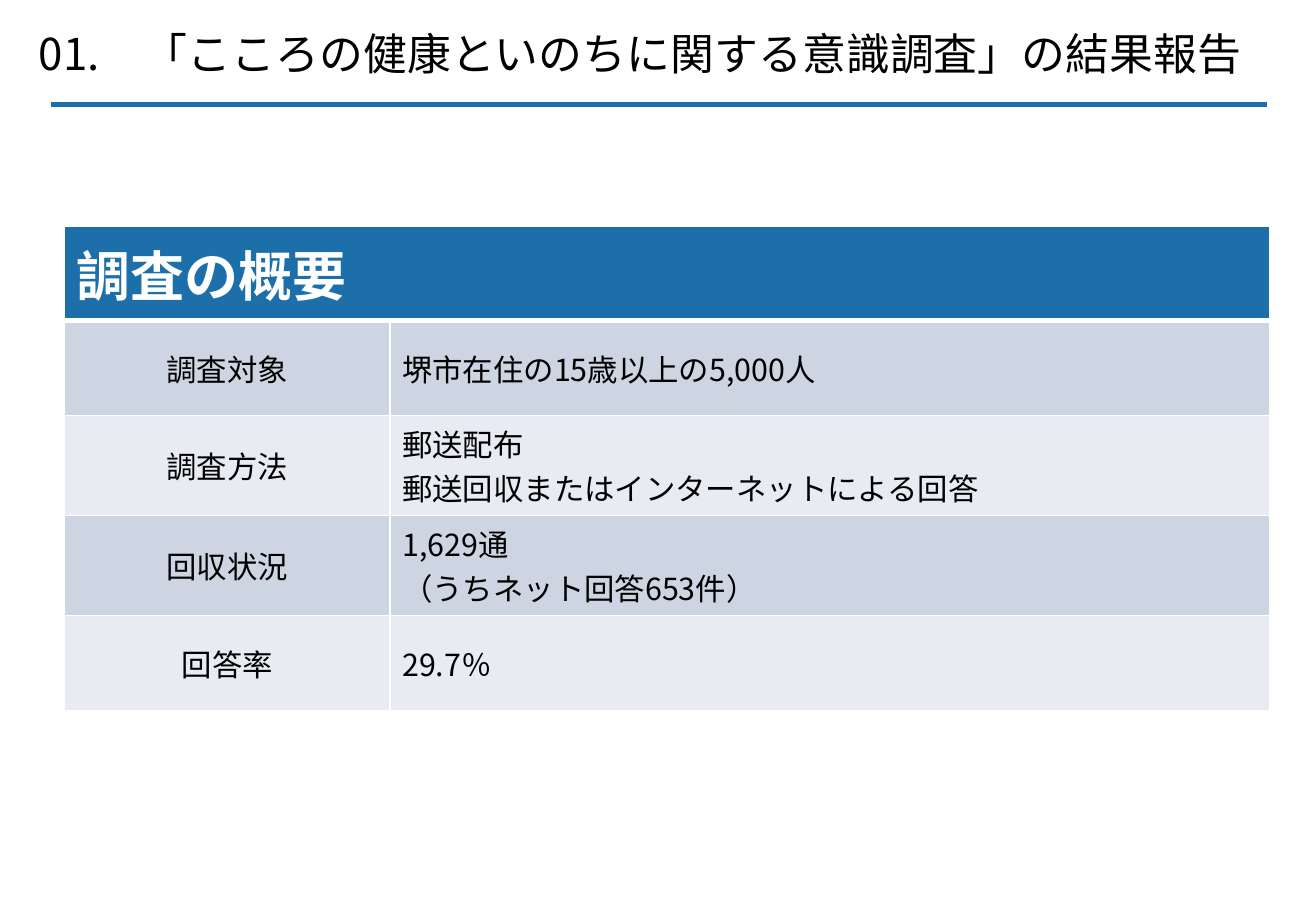
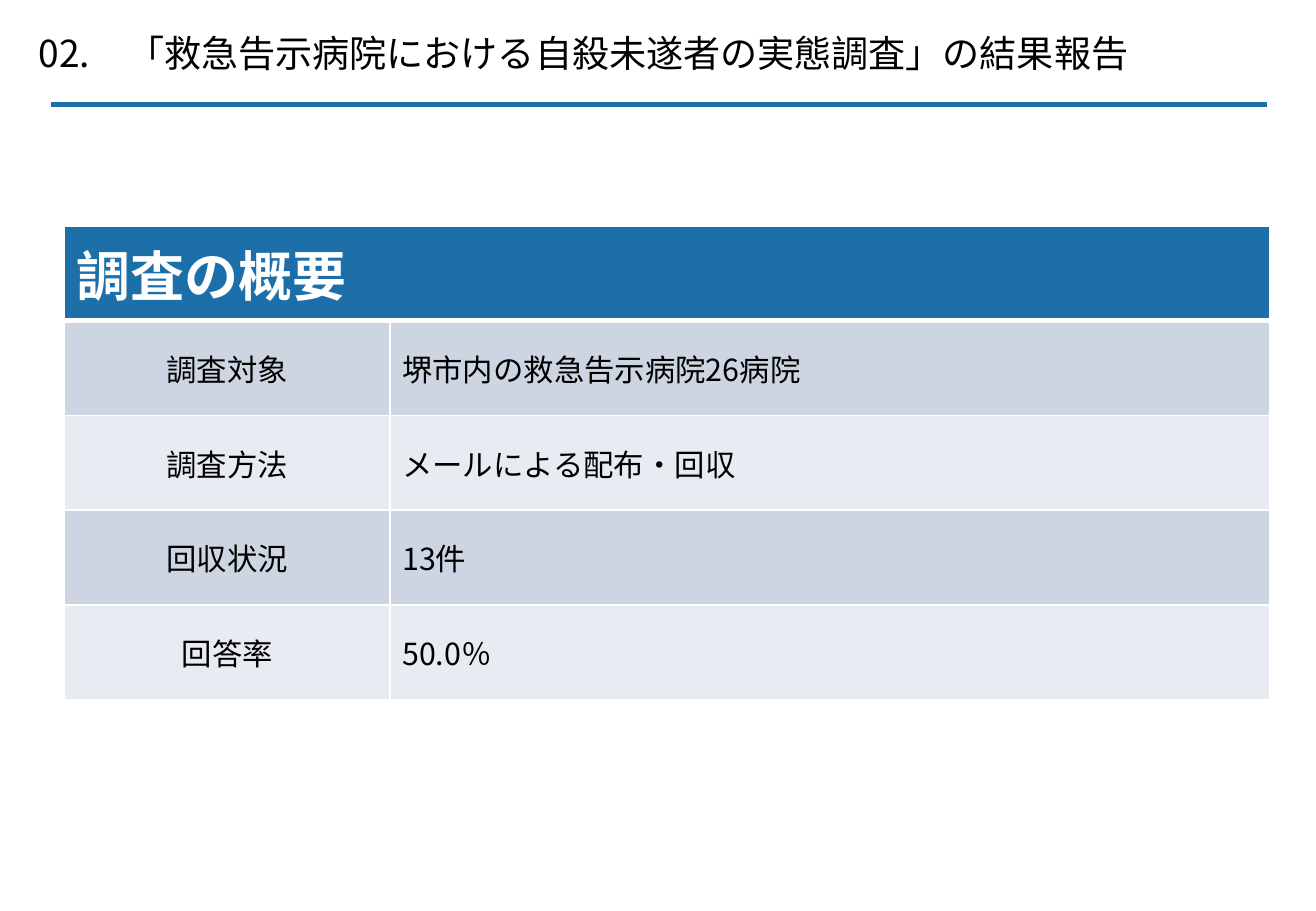
from dataclasses import dataclass

from lxml.etree import SubElement
from pptx import Presentation
from pptx.dml.color import RGBColor
from pptx.enum.shapes import MSO_CONNECTOR
from pptx.enum.text import MSO_ANCHOR, MSO_AUTO_SIZE, PP_ALIGN
from pptx.oxml import parse_xml
from pptx.oxml.ns import nsdecls, qn
from pptx.util import Inches, Pt


@dataclass(frozen=True)
class Theme:
    accent: str = "1D6FA9"
    band_dark: str = "CDD5E2"
    band_light: str = "E8EBF1"
    white: str = "FFFFFF"
    black: str = "000000"
    body_font: str = "Noto Sans CJK JP"
    heading_font: str = "Calibri"
    title_size: int = 26
    long_title_size: int = 22
    heading_size: int = 32
    body_size: int = 18
    rule_width: float = 3.5
    grid_width: int = 1
    heading_rule_width: int = 3


THEME = Theme()


def write(frame, text, size=THEME.body_size, font=THEME.body_font,
          color=THEME.black, bold=False, align=PP_ALIGN.LEFT):
    """Fill a text frame, one paragraph for each line of text."""
    for index, line in enumerate(text.split("\n")):
        paragraph = frame.add_paragraph() if index else frame.paragraphs[0]
        paragraph.alignment = align
        run = paragraph.add_run()
        run.text = line
        run.font.size = Pt(size)
        run.font.bold = bold
        run.font.color.rgb = RGBColor.from_string(color)
        run.font.name = font
        east_asian = SubElement(run.font._element, qn("a:ea"))
        east_asian.set("typeface", THEME.body_font)


def set_borders(cell, top, bottom):
    """Draw white cell borders; they must stand before the fill in the XML."""
    widths = {"L": THEME.grid_width, "R": THEME.grid_width, "T": top, "B": bottom}
    properties = cell._tc.get_or_add_tcPr()
    for index, (side, width) in enumerate(widths.items()):
        properties.insert(index, parse_xml(
            f'<a:ln{side} {nsdecls("a")} w="{Pt(width)}"><a:solidFill>'
            f'<a:srgbClr val="{THEME.white}"/></a:solidFill></a:ln{side}>'))


class Report:
    def __init__(self, theme):
        self.theme = theme
        self.deck = Presentation()
        self.deck.slide_width = Inches(10.83)
        self.deck.slide_height = Inches(7.5)
        self.slide = None

    def add_slide(self, title, title_size):
        self.slide = self.deck.slides.add_slide(self.deck.slide_layouts[5])
        self.add_title(title, title_size)
        self.add_title_rule()

    def add_title(self, text, size):
        title = self.slide.shapes.title
        title.left, title.top = Inches(0.22), Inches(0.14)
        title.width, title.height = Inches(10.83), Inches(0.47)
        frame = title.text_frame
        frame.auto_size = MSO_AUTO_SIZE.NONE
        frame.word_wrap = True
        frame.vertical_anchor = MSO_ANCHOR.MIDDLE
        frame.margin_left = frame.margin_right = Inches(0.1)
        frame.margin_top, frame.margin_bottom = Inches(0.12), 0
        write(frame, text, size=size)

    def add_title_rule(self):
        y = Inches(0.86)
        rule = self.slide.shapes.add_connector(
            MSO_CONNECTOR.STRAIGHT, Inches(0.42), y, Inches(10.43), y)
        rule.line.color.rgb = RGBColor.from_string(self.theme.accent)
        rule.line.width = Pt(self.theme.rule_width)
        SubElement(rule._element.spPr, qn("a:effectLst"))

    def add_overview(self, heading, entries):
        """Add a table with a merged heading row and one row per entry."""
        theme = self.theme
        row_count = len(entries) + 1
        table = self.slide.shapes.add_table(
            row_count, 2, Inches(0.53), Inches(1.86),
            Inches(9.92), Inches(0.78 * row_count)).table
        for column, width in zip(table.columns, (2.68, 7.24)):
            column.width = Inches(width)

        table.cell(0, 0).merge(table.cell(0, 1))
        for column in range(2):
            self.format_cell(table.cell(0, column), theme.accent,
                             bottom=theme.heading_rule_width)
        write(table.cell(0, 0).text_frame, heading, size=theme.heading_size,
              font=theme.heading_font, color=theme.white, bold=True)

        for row, entry in enumerate(entries, start=1):
            band = theme.band_dark if row % 2 else theme.band_light
            top = theme.heading_rule_width if row == 1 else theme.grid_width
            for column, align in enumerate((PP_ALIGN.CENTER, PP_ALIGN.LEFT)):
                cell = table.cell(row, column)
                self.format_cell(cell, band, top=top)
                write(cell.text_frame, entry[column], align=align)

    def format_cell(self, cell, fill, top=THEME.grid_width, bottom=THEME.grid_width):
        cell.fill.solid()
        cell.fill.fore_color.rgb = RGBColor.from_string(fill)
        cell.vertical_anchor = MSO_ANCHOR.MIDDLE
        set_borders(cell, top, bottom)


TOPICS = ("調査対象", "調査方法", "回収状況", "回答率")
SURVEYS = (
    ("01.　「こころの健康といのちに関する意識調査」の結果報告", THEME.title_size,
     ("堺市在住の15歳以上の5,000人",
      "郵送配布\n郵送回収またはインターネットによる回答",
      "1,629通\n（うちネット回答653件）",
      "29.7％")),
    ("02.　「救急告示病院における自殺未遂者の実態調査」の結果報告", THEME.long_title_size,
     ("堺市内の救急告示病院26病院",
      "メールによる配布・回収",
      "13件",
      "50.0％")),
)


def main():
    report = Report(THEME)
    for title, title_size, answers in SURVEYS:
        report.add_slide(title, title_size)
        report.add_overview("調査の概要", list(zip(TOPICS, answers)))
    report.deck.save("out.pptx")


if __name__ == "__main__":
    main()
